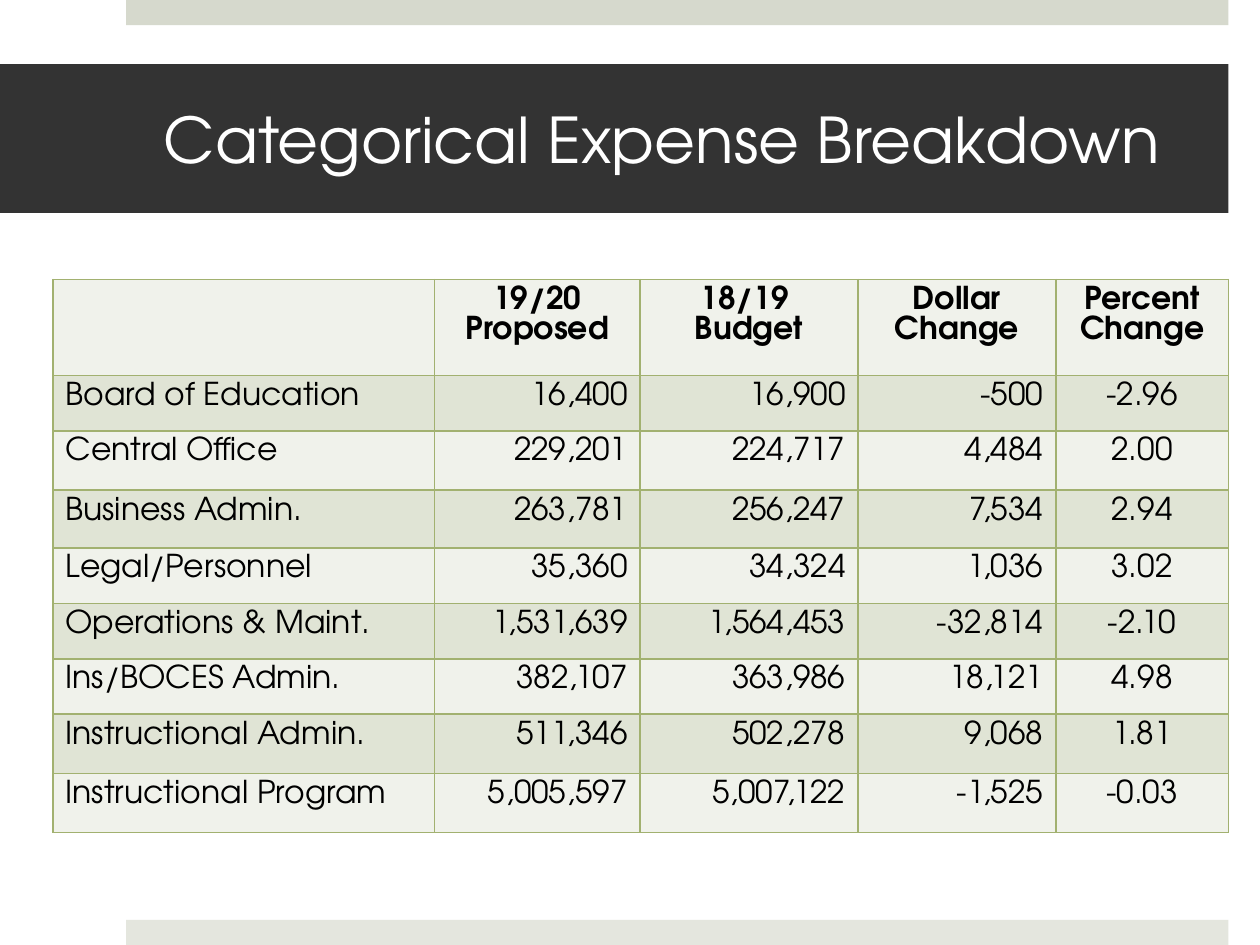
import pptx
import pptx.util
import pptx.dml.color
import pptx.enum.shapes
import pptx.enum.text
import pptx.oxml
import pptx.oxml.ns

Inches = pptx.util.Inches
Pt = pptx.util.Pt
ALIGN = pptx.enum.text.PP_ALIGN
FONT = "TeX Gyre Adventor"

COLUMN_WIDTHS = [3.03, 1.63, 1.73, 1.57, 1.37]
ROW_HEIGHTS = [0.76, 0.44, 0.47, 0.46, 0.44, 0.44, 0.44, 0.47, 0.47]
COLUMN_ALIGNMENTS = [ALIGN.LEFT, ALIGN.RIGHT, ALIGN.RIGHT, ALIGN.RIGHT, ALIGN.CENTER]
EXPENSES = [
    ["", "19/20 Proposed", "18/19 \nBudget", "Dollar Change", "Percent Change"],
    ["Board of Education", "16,400", "16,900", "-500", "-2.96"],
    ["Central Office", "229,201", "224,717", "4,484", "2.00"],
    ["Business Admin.", "263,781", "256,247", "7,534", "2.94"],
    ["Legal/Personnel", "35,360", "34,324", "1,036", "3.02"],
    ["Operations & Maint.", "1,531,639", "1,564,453", "-32,814", "-2.10"],
    ["Ins/BOCES Admin.", "382,107", "363,986", "18,121", "4.98"],
    ["Instructional Admin.", "511,346", "502,278", "9,068", "1.81"],
    ["Instructional Program", "5,005,597", "5,007,122", "-1,525", "-0.03"],
]


def color(value):
    return pptx.dml.color.RGBColor.from_string(value)


def style_font(paragraph, size, fill, bold=False):
    paragraph.font.name = FONT
    paragraph.font.size = Pt(size)
    paragraph.font.bold = bold
    paragraph.font.color.rgb = color(fill)


def add_band(slide, left, top, width, height, fill):
    band = slide.shapes.add_shape(
        pptx.enum.shapes.MSO_SHAPE.RECTANGLE,
        Inches(left), Inches(top), Inches(width), Inches(height))
    band.shadow.inherit = False
    band.fill.solid()
    band.fill.fore_color.rgb = color(fill)
    band.line.fill.background()
    return band


def add_title(slide, left, top, width, height):
    frame = add_band(slide, left, top, width, height, "333333").text_frame
    frame.word_wrap = True
    frame.vertical_anchor = pptx.enum.text.MSO_ANCHOR.MIDDLE
    frame.margin_left = Inches(1.3)
    frame.margin_right = Inches(0.3)
    frame.text = "Categorical Expense Breakdown"
    heading = frame.paragraphs[0]
    heading.alignment = ALIGN.LEFT
    style_font(heading, 36, "FFFFFF")


def set_borders(cell, line_color, width):
    properties = cell._tc.get_or_add_tcPr()
    for position, side in enumerate(("lnL", "lnR", "lnT", "lnB")):
        border = pptx.oxml.parse_xml(
            f'<a:{side} {pptx.oxml.ns.nsdecls("a")} w="{Pt(width)}">'
            f'<a:solidFill><a:srgbClr val="{line_color}"/></a:solidFill></a:{side}>')
        properties.insert(position, border)


def add_expense_table(slide, left, top):
    table = slide.shapes.add_table(
        len(EXPENSES), len(COLUMN_WIDTHS), Inches(left), Inches(top),
        Inches(sum(COLUMN_WIDTHS)), Inches(sum(ROW_HEIGHTS))).table
    table.first_row = False
    table.horz_banding = False
    for column, width in zip(table.columns, COLUMN_WIDTHS):
        column.width = Inches(width)
    for index, (row, height, texts) in enumerate(zip(table.rows, ROW_HEIGHTS, EXPENSES)):
        row.height = Inches(height)
        header = index == 0
        for cell, text, alignment in zip(row.cells, texts, COLUMN_ALIGNMENTS):
            cell.text = text
            cell.fill.solid()
            cell.fill.fore_color.rgb = color("E0E4D5" if index % 2 else "F0F2EB")
            set_borders(cell, "A2B170", 1)
            for paragraph in cell.text_frame.paragraphs:
                paragraph.alignment = ALIGN.CENTER if header else alignment
                paragraph.line_spacing = Pt(17)
                style_font(paragraph, 18, "000000", header)


def main():
    presentation = pptx.Presentation()
    presentation.slide_width = Inches(10)
    presentation.slide_height = Inches(7.5)
    slide = presentation.slides.add_slide(presentation.slide_layouts[6])
    add_band(slide, 1, 0, 8.75, 0.2, "D6D9CD")
    add_band(slide, 1, 7.3, 8.75, 0.2, "E4E6DE")
    add_title(slide, 0, 0.51, 9.75, 1.18)
    add_expense_table(slide, 0.42, 2.22)
    presentation.save("out.pptx")


if __name__ == "__main__":
    main()
